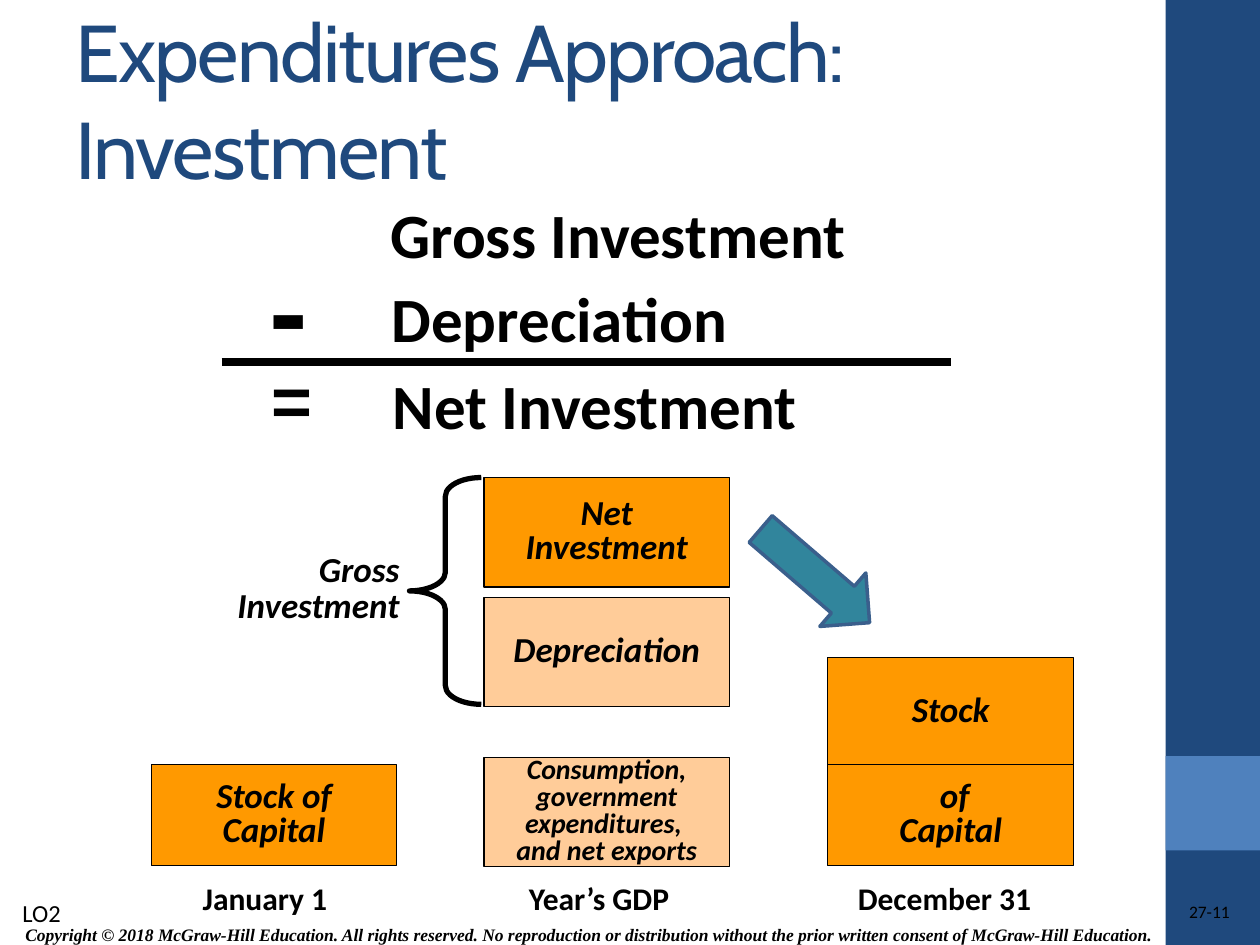
"""Build the slide on gross and net investment in the expenditures approach."""
from dataclasses import dataclass
from typing import Optional

from lxml import etree
from pptx import Presentation
from pptx.dml.color import RGBColor
from pptx.enum.shapes import MSO_CONNECTOR, MSO_SHAPE
from pptx.enum.text import MSO_ANCHOR, MSO_AUTO_SIZE, PP_ALIGN
from pptx.oxml.ns import qn
from pptx.util import Inches, Pt

LEFT, CENTER, RIGHT = PP_ALIGN.LEFT, PP_ALIGN.CENTER, PP_ALIGN.RIGHT
TOP, MIDDLE = MSO_ANCHOR.TOP, MSO_ANCHOR.MIDDLE
RECTANGLE, BRACE, ARROW = MSO_SHAPE.RECTANGLE, MSO_SHAPE.LEFT_BRACE, MSO_SHAPE.DOWN_ARROW
STRAIGHT = MSO_CONNECTOR.STRAIGHT
NO_AUTOFIT, GROW = MSO_AUTO_SIZE.NONE, MSO_AUTO_SIZE.SHAPE_TO_FIT_TEXT

BLACK = RGBColor(0x00, 0x00, 0x00)
NAVY = RGBColor(0x1F, 0x49, 0x7D)
BLUE = RGBColor(0x4F, 0x81, 0xBD)
ORANGE = RGBColor(0xFF, 0x99, 0x00)
PEACH = RGBColor(0xFF, 0xCC, 0x99)
TEAL = RGBColor(0x31, 0x85, 0x9C)
STEEL = RGBColor(0x3A, 0x5F, 0x8C)

COLUMNS, ROWS = 100, 75
TITLE_ONLY = 5
BLOCK_WIDTH, BLOCK_HEIGHT, STOCK_HEIGHT = 19.5, 8.7, 8
JANUARY, YEAR, DECEMBER = 12, 38.4, 65.7
STOCK_TOP = 60.7

presentation = Presentation()
presentation.slide_width, presentation.slide_height = Inches(10), Inches(7.5)
COLUMN = presentation.slide_width / COLUMNS
ROW = presentation.slide_height / ROWS


@dataclass(frozen=True)
class Box:
    """A rectangle in grid columns and rows."""
    left: float
    top: float
    width: float
    height: float

    def lengths(self) -> tuple[int, int, int, int]:
        """Return left, top, width and height as slide lengths."""
        return (round(self.left * COLUMN), round(self.top * ROW),
                round(self.width * COLUMN), round(self.height * ROW))


@dataclass(frozen=True)
class Style:
    """The look of a piece of text."""
    size: float
    font: str = "Calibri"
    bold: bool = True
    italic: bool = False
    color: RGBColor = BLACK
    align: PP_ALIGN = LEFT
    spacing: Optional[float] = None


@dataclass(frozen=True)
class Label:
    """A text box with its lines of text."""
    box: Box
    lines: tuple[str, ...]
    style: Style
    wrap: bool = False
    anchor: MSO_ANCHOR = TOP
    inset: bool = True
    grow: bool = True


@dataclass(frozen=True)
class Block:
    """A filled, outlined rectangle of the capital stock diagram."""
    left: float
    top: float
    height: float
    fill: RGBColor
    lines: tuple[str, ...]
    size: float = 20


TERM = Style(36)
DATE = Style(18)
LABELS = (
    Label(Box(0.6, 72.8, 92.2, 2.8),
          ("Copyright © 2018 McGraw-Hill Education. All rights reserved. No reproduction or "
           "distribution without the prior written consent of McGraw-Hill Education.",),
          Style(10, "Times New Roman", italic=True, align=CENTER), True, MIDDLE, grow=False),
    Label(Box(78.1, 71.5, 19.5, 2), ("27-11",),
          Style(10, bold=False, align=RIGHT, spacing=1.02), True, inset=False, grow=False),
    Label(Box(15.1, 69.3, 12, 4), ("January 1",), DATE),
    Label(Box(41, 69.3, 13.3, 4), ("Year’s GDP",), DATE),
    Label(Box(67.1, 69.3, 15.9, 4), ("December 31",), DATE),
    Label(Box(17.7, 43.5, 15, 6.7), ("Gross", "Investment"),
          Style(20, italic=True, align=RIGHT, spacing=0.85)),
    Label(Box(30, 15, 38.5, 7.1), ("Gross Investment",), TERM),
    Label(Box(30.1, 21.7, 29, 7.1), ("Depreciation",), TERM),
    Label(Box(30.2, 28.6, 34.4, 7.1), ("Net Investment",), TERM),
    Label(Box(20.4, 18.3, 5.1, 12), ("-",), Style(66, "Arial")),
    Label(Box(20.6, 27.8, 5.4, 7.7), ("=",), Style(40, "Arial"), True),
    Label(Box(0.8, 70.8, 5.3, 3.4), ("LO2",), Style(14, bold=False), True),
)
BLOCKS = (
    Block(YEAR, 60.1, BLOCK_HEIGHT, PEACH,
          ("Consumption,", "government", "expenditures, ", "and net exports"), 16),
    Block(YEAR, 47.4, BLOCK_HEIGHT, PEACH, ("Depreciation",)),
    Block(YEAR, 37.9, BLOCK_HEIGHT, ORANGE, ("Net", "Investment")),
    Block(JANUARY, STOCK_TOP, STOCK_HEIGHT, ORANGE, ("Stock of", "Capital")),
    Block(DECEMBER, 52.2, BLOCK_HEIGHT, ORANGE, ("Stock",)),
    Block(DECEMBER, STOCK_TOP, STOCK_HEIGHT, ORANGE, (" of", "Capital")),
)


def write(frame, lines: tuple[str, ...], style: Style) -> None:
    """Write one paragraph per line into a text frame."""
    for index, line in enumerate(lines):
        paragraph = frame.add_paragraph() if index else frame.paragraphs[0]
        paragraph.alignment = style.align
        if style.spacing:
            paragraph.line_spacing = style.spacing
        run = paragraph.add_run()
        run.text = line
        font = run.font
        font.name, font.size = style.font, Pt(style.size)
        font.bold, font.italic = style.bold, style.italic
        font.color.rgb = style.color


def add_form(slide, kind: MSO_SHAPE, box: Box, fill: Optional[RGBColor] = None,
             line: Optional[RGBColor] = None, weight: float = 0.75):
    """Add a preset shape with the given fill and outline."""
    shape = slide.shapes.add_shape(kind, *box.lengths())
    shape.shadow.inherit = False
    if fill is None:
        shape.fill.background()
    else:
        shape.fill.solid()
        shape.fill.fore_color.rgb = fill
    if line is None:
        shape.line.fill.background()
    else:
        shape.line.color.rgb = line
        shape.line.width = Pt(weight)
    return shape


def add_block(slide, block: Block) -> None:
    """Add a diagram block with centred text."""
    box = Box(block.left, block.top, BLOCK_WIDTH, block.height)
    frame = add_form(slide, RECTANGLE, box, block.fill, BLACK).text_frame
    frame.word_wrap = False
    frame.vertical_anchor = MIDDLE
    write(frame, block.lines, Style(block.size, italic=True, align=CENTER, spacing=0.8))


def add_label(slide, label: Label) -> None:
    """Add a text box."""
    frame = slide.shapes.add_textbox(*label.box.lengths()).text_frame
    frame.word_wrap = label.wrap
    frame.auto_size = GROW if label.grow else NO_AUTOFIT
    frame.vertical_anchor = label.anchor
    if not label.inset:
        frame.margin_left = frame.margin_top = frame.margin_right = frame.margin_bottom = 0
    write(frame, label.lines, label.style)


def add_title(slide, text: str) -> None:
    """Place and format the title placeholder."""
    title = slide.shapes.title
    title.left, title.top, title.width, title.height = Box(5, 0.1, 83.3, 15.5).lengths()
    frame = title.text_frame
    frame.auto_size, frame.vertical_anchor = NO_AUTOFIT, MIDDLE
    write(frame, (text,), Style(46, "Cabin", bold=False, color=NAVY))
    frame.paragraphs[0].runs[0].font._element.set("spc", "-100")


def add_rule(slide, left: float, right: float, row: float, weight: float) -> None:
    """Add a horizontal line between two columns."""
    start_x, y, width, _ = Box(left, row, right - left, 0).lengths()
    rule = slide.shapes.add_connector(STRAIGHT, start_x, y, start_x + width, y)
    rule.line.color.rgb = BLACK
    rule.line.width = Pt(weight)
    etree.SubElement(rule._element.spPr, qn("a:effectLst"))


def main() -> None:
    """Build and save the slide."""
    slide = presentation.slides.add_slide(presentation.slide_layouts[TITLE_ONLY])
    add_form(slide, RECTANGLE, Box(92.5, 0, 7.5, ROWS), NAVY)
    add_form(slide, RECTANGLE, Box(92.5, 60, 7.5, 7.5), BLUE)
    add_title(slide, "Expenditures Approach: Investment")
    for block in BLOCKS:
        add_block(slide, block)
    brace = add_form(slide, BRACE, Box(32.5, 37.9, 5.7, 18), line=BLACK, weight=3)
    brace.adjustments[0] = 0.26
    add_rule(slide, 17.6, 75.5, 28.7, 4.5)
    arrow = add_form(slide, ARROW, Box(61.9, 40, 5.6, 11.4), TEAL, STEEL, 2)
    arrow.rotation = 310.7
    for label in LABELS:
        add_label(slide, label)
    presentation.save("out.pptx")


if __name__ == "__main__":
    main()
